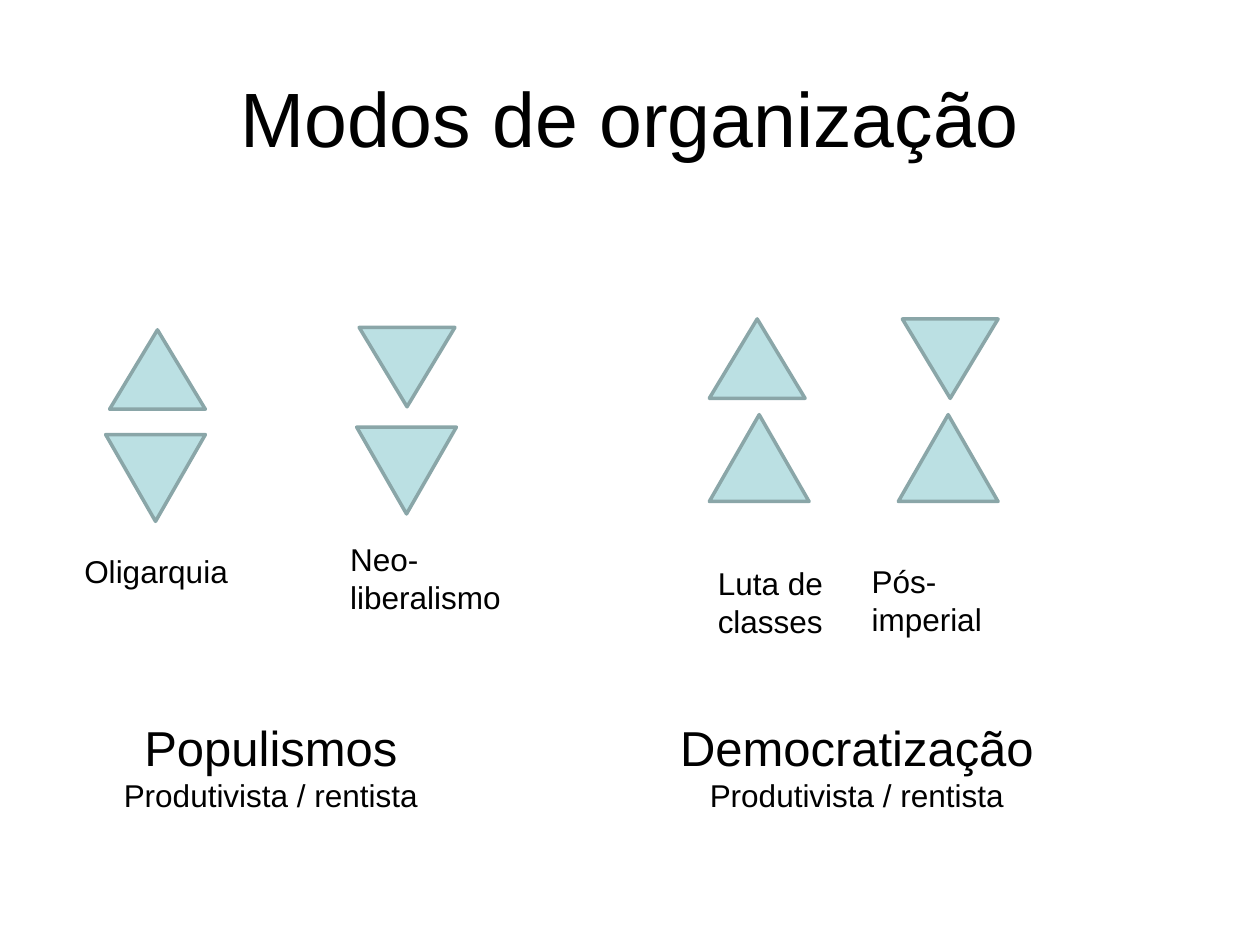
from dataclasses import dataclass

from pptx import Presentation
from pptx.dml.color import RGBColor
from pptx.enum.shapes import MSO_SHAPE
from pptx.enum.text import MSO_ANCHOR, MSO_AUTO_SIZE, PP_ALIGN
from pptx.util import Cm, Pt

BLACK = RGBColor(0x00, 0x00, 0x00)
PALE_TEAL = RGBColor(0xBB, 0xE0, 0xE3)
GREY_TEAL = RGBColor(0x8A, 0xA6, 0xA8)
UPPER_SIZE = (1.93, 1.6)
LOWER_SIZE = (2.01, 1.75)
LABEL_HEIGHT = {1: 1.02, 2: 1.8}


@dataclass
class Mode:
    """One organisation mode; offsets are in cm from its upper triangle."""
    name: str
    origin: tuple  # from the group's corner
    upper_down: bool
    lower_down: bool
    lower_offset: tuple
    label_offset: tuple
    label_width: float
    label_lines: int = 2


@dataclass
class Caption:
    heading: str
    offset: tuple
    width: float
    align: PP_ALIGN


POPULISM = [
    Mode("Oligarquia", (0.76, 0.22), False, True,
         (-0.08, 2.11), (-0.76, 4.35), 3.76, label_lines=1),
    Mode("Neo-liberalismo", (5.79, 0.17), True, True,
         (-0.05, 2.01), (-0.43, 4.17), 3.68),
]
DEMOCRACY = [
    Mode("Luta de classes", (0.84, 0), False, False,
         (0, 1.93), (-0.08, 4.82), 2.69),
    Mode("Pós-imperial", (4.73, 0), True, False,
         (-0.08, 1.93), (-0.87, 4.77), 3.28),
]


def write(paragraph, text, size=18, align=PP_ALIGN.LEFT):
    paragraph.alignment = align
    run = paragraph.add_run()
    run.text = text
    run.font.name = "Arial"
    run.font.size = Pt(size)
    run.font.color.rgb = BLACK


def add_frame(slide, left, top, width, height, wrap=True):
    frame = slide.shapes.add_textbox(
        Cm(left), Cm(top), Cm(width), Cm(height)).text_frame
    frame.word_wrap = wrap
    frame.auto_size = MSO_AUTO_SIZE.SHAPE_TO_FIT_TEXT
    return frame


def draw_triangle(slide, left, top, size, down):
    triangle = slide.shapes.add_shape(
        MSO_SHAPE.ISOSCELES_TRIANGLE, Cm(left), Cm(top), *map(Cm, size))
    triangle.rotation = 180 if down else 0
    triangle.shadow.inherit = False
    triangle.fill.solid()
    triangle.fill.fore_color.rgb = PALE_TEAL
    triangle.line.color.rgb = GREY_TEAL
    triangle.line.width = Pt(2)


def draw_mode(slide, left, top, mode):
    draw_triangle(slide, left, top, UPPER_SIZE, mode.upper_down)
    dx, dy = mode.lower_offset
    draw_triangle(slide, left + dx, top + dy, LOWER_SIZE, mode.lower_down)
    dx, dy = mode.label_offset
    label = add_frame(slide, left + dx, top + dy, mode.label_width,
                      LABEL_HEIGHT[mode.label_lines])
    write(label.paragraphs[0], mode.name)


def draw_group(slide, left, top, modes, caption):
    for mode in modes:
        dx, dy = mode.origin
        draw_mode(slide, left + dx, top + dy, mode)
    dx, dy = caption.offset
    frame = add_frame(slide, left + dx, top + dy, caption.width, 2.24, wrap=False)
    write(frame.paragraphs[0], caption.heading, size=28, align=caption.align)
    write(frame.add_paragraph(), "Produtivista / rentista", align=PP_ALIGN.CENTER)


def place_title(slide, left, top, width, height, text):
    title = slide.shapes.title
    title.left, title.top = Cm(left), Cm(top)
    title.width, title.height = Cm(width), Cm(height)
    title.text_frame.vertical_anchor = MSO_ANCHOR.MIDDLE
    write(title.text_frame.paragraphs[0], text, size=44, align=PP_ALIGN.CENTER)


def main():
    deck = Presentation()
    deck.slide_width, deck.slide_height = Cm(25.4), Cm(19.05)
    slide = deck.slides.add_slide(deck.slide_layouts.get_by_name("Title Only"))
    place_title(slide, 1.27, 0.76, 22.86, 3.18, "Modos de organização")
    draw_group(slide, 1.45, 6.43, POPULISM,
               Caption("Populismos", (0.76, 7.9), 6.5, PP_ALIGN.CENTER))
    draw_group(slide, 13.46, 6.43, DEMOCRACY,
               Caption("Democratização", (0, 7.9), 7.75, PP_ALIGN.LEFT))
    deck.save("out.pptx")


if __name__ == "__main__":
    main()
